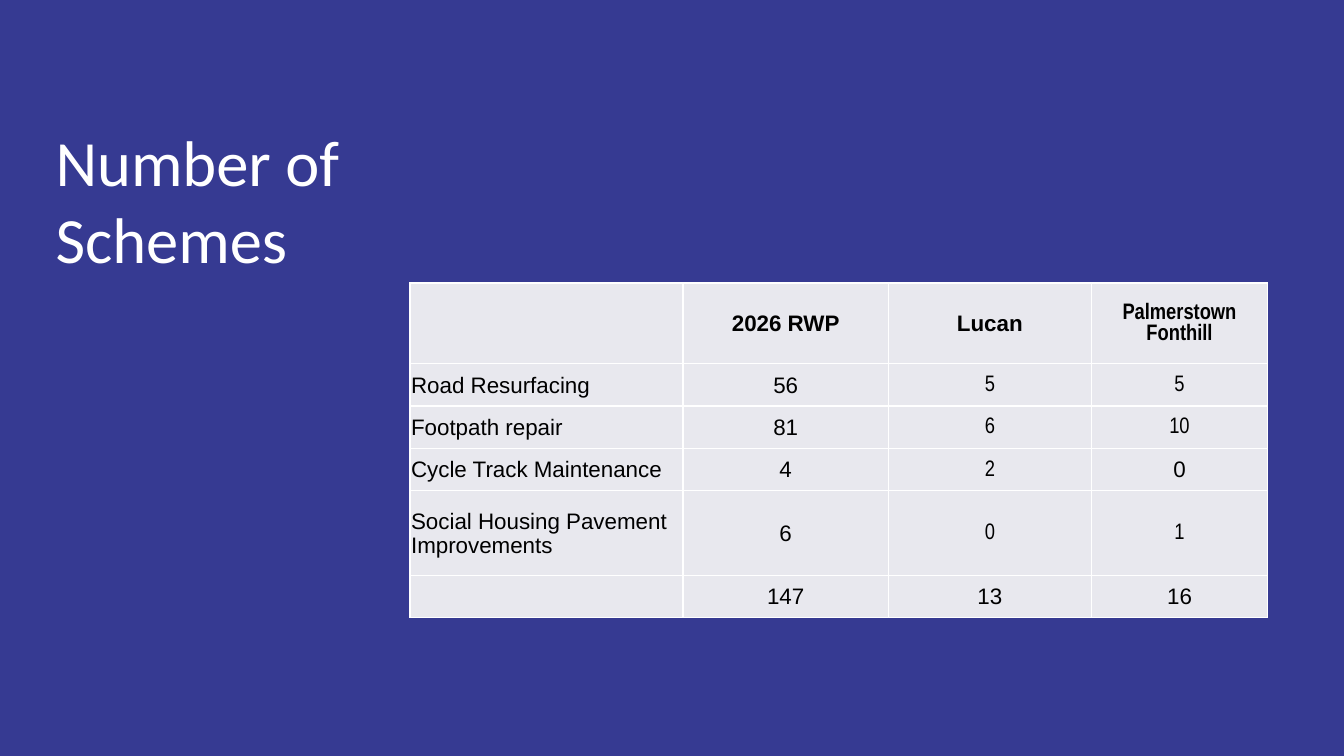
"""Build the slide that tables the number of schemes by area."""
from dataclasses import dataclass
from typing import Any

from lxml import etree
from pptx import Presentation
from pptx.dml.color import RGBColor
from pptx.enum.text import MSO_ANCHOR, PP_ALIGN
from pptx.oxml.ns import qn
from pptx.util import Cm, Pt

MIDDLE = MSO_ANCHOR.MIDDLE
TOP = MSO_ANCHOR.TOP
LEFT = PP_ALIGN.LEFT
CENTER = PP_ALIGN.CENTER


@dataclass(frozen=True)
class Theme:
    """Colours, fonts and type sizes of the slide."""

    background: str = "363A92"
    light: str = "FFFFFF"
    dark: str = "000000"
    cell: str = "E8E8EE"
    title_font: str = "Calibri"
    body_font: str = "Arial"
    narrow_font: str = "Arial Narrow"
    title_size: float = 46.1
    body_size: float = 16
    border_width: float = 1


@dataclass(frozen=True)
class Entry:
    """Text of one table cell and whether it is set narrow."""

    text: str
    narrow: bool = False


THEME = Theme()
COLUMN_WIDTHS = (6.88, 5.18, 5.11, 4.45)
ROW_HEIGHTS = (2.03, 1.07, 1.07, 1.07, 2.13, 1.07)
CELL_MARGINS = {
    "margin_left": Cm(0.03),
    "margin_right": Cm(0.03),
    "margin_top": Cm(0.03),
    "margin_bottom": Cm(0),
}
ROWS = (
    (Entry(""), Entry("2026 RWP"), Entry("Lucan"), Entry("Palmerstown Fonthill", True)),
    (Entry("Road Resurfacing"), Entry("56"), Entry("5", True), Entry("5", True)),
    (Entry("Footpath repair"), Entry("81"), Entry("6", True), Entry("10", True)),
    (Entry("Cycle Track Maintenance"), Entry("4"), Entry("2", True), Entry("0")),
    (
        Entry("Social Housing Pavement Improvements"),
        Entry("6"),
        Entry("0", True),
        Entry("1", True),
    ),
    (Entry(""), Entry("147"), Entry("13"), Entry("16")),
)


def apply_format(target: Any, values: dict[str, Any]) -> None:
    """Set every attribute named in the format values."""
    for name, value in values.items():
        setattr(target, name, value)


def write_text(paragraph: Any, text: str, color: str, values: dict[str, Any]) -> None:
    """Write text into a paragraph with one font format."""
    paragraph.text = text
    apply_format(paragraph.font, values)
    for run in paragraph.runs:
        apply_format(run.font, values)
        run.font.color.rgb = RGBColor.from_string(color)


def add_borders(cell: Any) -> None:
    """Draw a thin line on all four sides of a cell."""
    properties = cell._tc.get_or_add_tcPr()
    for side in ("a:lnL", "a:lnR", "a:lnT", "a:lnB"):
        line = etree.SubElement(properties, qn(side), w=str(Pt(THEME.border_width)))
        fill = etree.SubElement(line, qn("a:solidFill"))
        etree.SubElement(fill, qn("a:srgbClr"), val=THEME.light)


def fill_cell(cell: Any, entry: Entry, row: int, column: int) -> None:
    """Format one table cell and write its entry."""
    add_borders(cell)
    cell.fill.solid()
    cell.fill.fore_color.rgb = RGBColor.from_string(THEME.cell)
    apply_format(cell, {"vertical_anchor": MIDDLE, **CELL_MARGINS})
    paragraph = cell.text_frame.paragraphs[0]
    paragraph.alignment = CENTER if column else LEFT
    values = {
        "name": THEME.narrow_font if entry.narrow else THEME.body_font,
        "size": Pt(THEME.body_size),
        "bold": row == 0,
    }
    write_text(paragraph, entry.text, THEME.dark, values)


def add_title(slide: Any) -> None:
    """Add the slide title."""
    shape = slide.shapes.add_textbox(Cm(1.4), Cm(3.07), Cm(11.05), Cm(5.94))
    frame_format = {
        "word_wrap": True,
        "vertical_anchor": TOP,
        "margin_left": 0,
        "margin_right": 0,
        "margin_top": 0,
        "margin_bottom": 0,
    }
    apply_format(shape.text_frame, frame_format)
    values = {"name": THEME.title_font, "size": Pt(THEME.title_size)}
    write_text(shape.text_frame.paragraphs[0], "Number of Schemes", THEME.light, values)


def add_scheme_table(slide: Any) -> None:
    """Add the table of schemes."""
    shape = slide.shapes.add_table(
        len(ROWS), len(COLUMN_WIDTHS), Cm(10.33), Cm(7.13),
        Cm(sum(COLUMN_WIDTHS)), Cm(sum(ROW_HEIGHTS)),
    )
    table = shape.table
    apply_format(table, {"first_row": False, "horz_banding": False})
    for column, width in zip(table.columns, COLUMN_WIDTHS):
        column.width = Cm(width)
    for row, height in zip(table.rows, ROW_HEIGHTS):
        row.height = Cm(height)
    for row_index, entries in enumerate(ROWS):
        for column_index, entry in enumerate(entries):
            cell = table.cell(row_index, column_index)
            fill_cell(cell, entry, row_index, column_index)


def main() -> None:
    """Build and save the presentation."""
    presentation = Presentation()
    apply_format(presentation, {"slide_width": Cm(33.87), "slide_height": Cm(19.05)})
    slide = presentation.slides.add_slide(presentation.slide_layouts[6])
    slide.background.fill.solid()
    slide.background.fill.fore_color.rgb = RGBColor.from_string(THEME.background)
    add_title(slide)
    add_scheme_table(slide)
    presentation.save("out.pptx")


if __name__ == "__main__":
    main()
